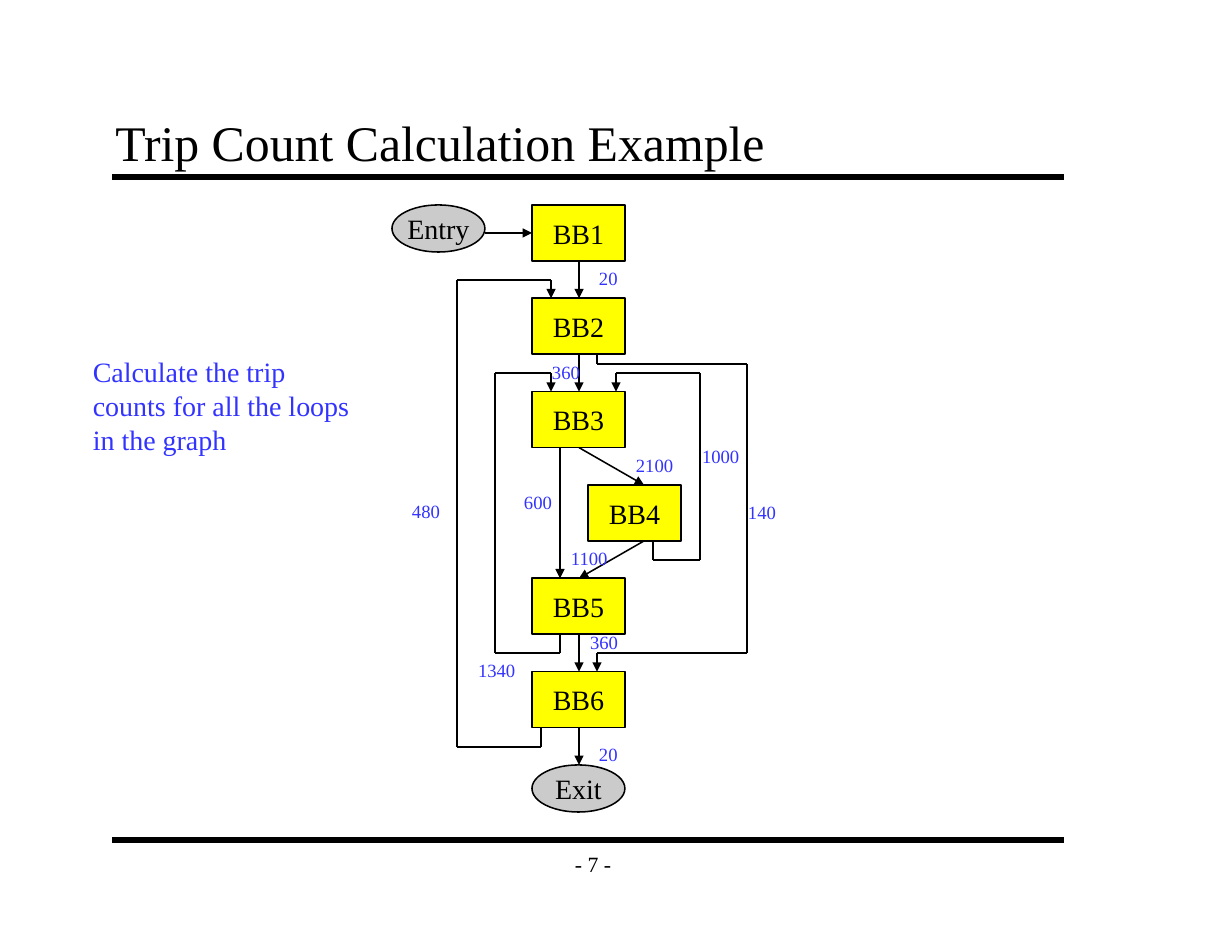
from itertools import pairwise
from lxml import etree
from pptx import Presentation
from pptx.dml.color import RGBColor
from pptx.enum.shapes import MSO_CONNECTOR, MSO_SHAPE
from pptx.enum.text import MSO_ANCHOR, MSO_AUTO_SIZE, PP_ALIGN
from pptx.oxml.ns import qn
from pptx.util import Inches, Pt

RECT, OVAL = MSO_SHAPE.RECTANGLE, MSO_SHAPE.OVAL
LEFT, CENTER = PP_ALIGN.LEFT, PP_ALIGN.CENTER
TOP, MIDDLE, BOTTOM = MSO_ANCHOR.TOP, MSO_ANCHOR.MIDDLE, MSO_ANCHOR.BOTTOM

THEME = {
    "font": "Times New Roman",
    "black": RGBColor(0x00, 0x00, 0x00),
    "blue": RGBColor(0x33, 0x33, 0xFF),
    "block": RGBColor(0xFF, 0xFF, 0x00),
    "terminal": RGBColor(0xCB, 0xCB, 0xCB),
    "title": 32, "body": 18, "page": 14, "count": 12,
    "rule": 4, "edge": 1,
}

# Content
TITLE = "Trip Count Calculation Example"
PAGE = "- 7 -"
TASK = ["Calculate the trip", "counts for all the loops", "in the graph"]
BLOCKS = ["BB1", "BB2", "BB3", "BB4", "BB5", "BB6"]
TERMINALS = [("Entry", 3.5, 1.83), ("Exit", 4.75, 6.83)]
COUNTS = [  # text, left, top
    ("20", 5.25, 2.33), ("600", 4.58, 4.33), ("360", 5.17, 5.58),
    ("2100", 5.58, 4), ("140", 6.58, 4.42), ("360", 4.83, 3.17),
    ("480", 3.58, 4.41), ("20", 5.25, 6.58), ("1000", 6.17, 3.92),
    ("1340", 4.17, 5.83), ("1100", 5, 4.83),
]

# Block grid: equal rows, BB4 stepped to the right
BLOCK_W, BLOCK_H, OVAL_H = 0.83, 0.5, 0.42
BLOCK_X, BLOCK_Y, ROW = 4.75, 1.83, 2.5 / 3
SHIFT = {"BB4": 0.5}
top = {name: BLOCK_Y + i * ROW for i, name in enumerate(BLOCKS)}
bottom = {name: y + BLOCK_H for name, y in top.items()}
MID = 5.17

# Each edge is a run of points with an arrowhead at its end
EDGES = [
    [(4.33, 2.08), (BLOCK_X, 2.08)],
    [(MID, bottom["BB1"]), (MID, top["BB2"])],
    [(MID, bottom["BB2"]), (MID, top["BB3"])],
    [(MID, bottom["BB3"]), (5.75, top["BB4"])],
    [(5.75, bottom["BB4"]), (MID, top["BB5"])],
    [(5, bottom["BB3"]), (5, top["BB5"])],
    [(MID, bottom["BB5"]), (MID, top["BB6"])],
    [(MID, bottom["BB6"]), (MID, 6.83)],
    # BB5 back to BB3
    [(5, bottom["BB5"]), (5, 5.83), (4.42, 5.83), (4.42, 3.33),
     (4.92, 3.33), (4.92, top["BB3"])],
    # BB4 back to BB3
    [(5.83, bottom["BB4"]), (5.83, 5), (6.25, 5), (6.25, 3.33),
     (5.5, 3.33), (5.5, top["BB3"])],
    # BB2 past the inner loops to BB6
    [(5.33, bottom["BB2"]), (5.33, 3.25), (6.67, 3.25), (6.67, 5.83),
     (5.33, 5.83), (5.33, top["BB6"])],
    # BB6 back to BB2
    [(4.83, bottom["BB6"]), (4.83, 6.67), (4.08, 6.67), (4.08, 2.5),
     (4.92, 2.5), (4.92, top["BB2"])],
]

prs = Presentation()
prs.slide_width, prs.slide_height = Inches(11), Inches(8.5)
s = prs.slides.add_slide(prs.slide_layouts[5])


def write(shape, lines, size, color, align=LEFT, anchor=TOP, wrap=False):
    tf = shape.text_frame
    tf.text = "\n".join(lines)
    tf.word_wrap = wrap
    tf.vertical_anchor = anchor
    for p in tf.paragraphs:
        p.alignment = align
        for r in p.runs:
            r.font.name = THEME["font"]
            r.font.size = Pt(THEME[size])
            r.font.color.rgb = THEME[color]
    return tf


def set_insets(tf):
    tf.margin_left = tf.margin_right = Inches(0.11)
    tf.margin_top = tf.margin_bottom = Inches(0.06)


def add_text(x, y, w, h, lines, size, color, **layout):
    box = s.shapes.add_textbox(Inches(x), Inches(y), Inches(w), Inches(h))
    return write(box, lines, size, color, **layout)


def add_line(start, end, width, arrow=False):
    points = [Inches(v) for v in (*start, *end)]
    line = s.shapes.add_connector(MSO_CONNECTOR.STRAIGHT, *points)
    line.line.color.rgb = THEME["black"]
    line.line.width = Pt(THEME[width])
    if arrow:
        ln = line.line._get_or_add_ln()
        etree.SubElement(ln, qn("a:tailEnd"), type="triangle")
    etree.SubElement(line._element.spPr, qn("a:effectLst"))


def add_node(kind, name, x, y, h, fill):
    node = s.shapes.add_shape(kind, Inches(x), Inches(y),
                              Inches(BLOCK_W), Inches(h))
    node.shadow.inherit = False
    node.fill.solid()
    node.fill.fore_color.rgb = THEME[fill]
    node.line.color.rgb = THEME["black"]
    node.line.width = Pt(THEME["edge"])
    write(node, [name], "body", "black", align=CENTER, anchor=MIDDLE)


# Frame: rules, page number and title
for y in (1.58, 7.5):
    add_line((1, y), (9.5, y), "rule")
set_insets(add_text(4.92, 7.5, 0.75, 0.42, [PAGE], "page", "black",
                    align=CENTER, anchor=MIDDLE))
title = s.shapes.title
title.left, title.top = Inches(0.92), Inches(0.92)
title.width, title.height = Inches(8.5), Inches(0.67)
tf = write(title, [TITLE], "title", "black", anchor=BOTTOM, wrap=True)
tf.auto_size = MSO_AUTO_SIZE.NONE
set_insets(tf)

# Flow graph: nodes, then edges
for name in BLOCKS:
    add_node(RECT, name, BLOCK_X + SHIFT.get(name, 0), top[name],
             BLOCK_H, "block")
for name, x, y in TERMINALS:
    add_node(OVAL, name, x, y, OVAL_H, "terminal")
for edge in EDGES:
    for start, end in pairwise(edge):
        add_line(start, end, "edge", arrow=end == edge[-1])

# Edge counts and the task
for count, x, y in COUNTS:
    tf = add_text(x, y, 0.21 + 0.08 * len(count), 0.3, [count], "count", "blue")
    tf.auto_size = MSO_AUTO_SIZE.SHAPE_TO_FIT_TEXT
tf = add_text(0.73, 3.12, 2.49, 1, TASK, "body", "blue")
tf.auto_size = MSO_AUTO_SIZE.SHAPE_TO_FIT_TEXT

prs.save("out.pptx")
